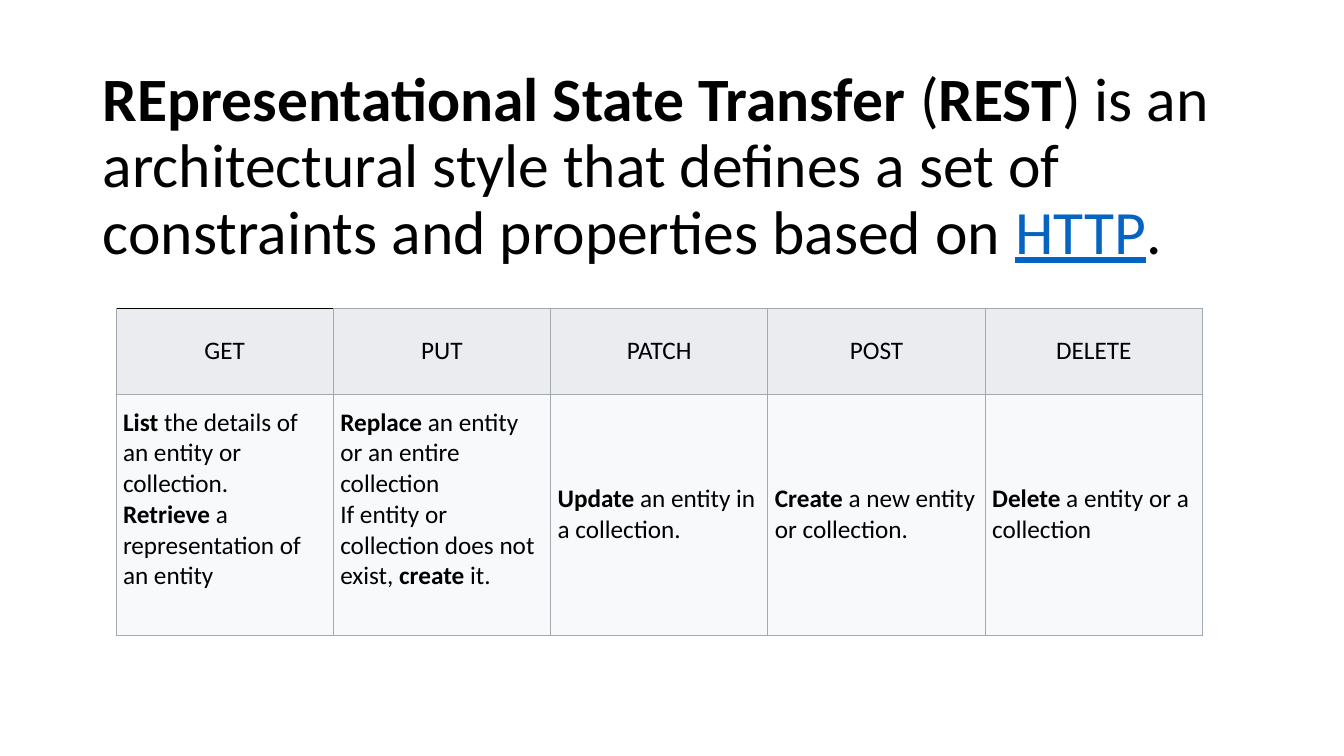
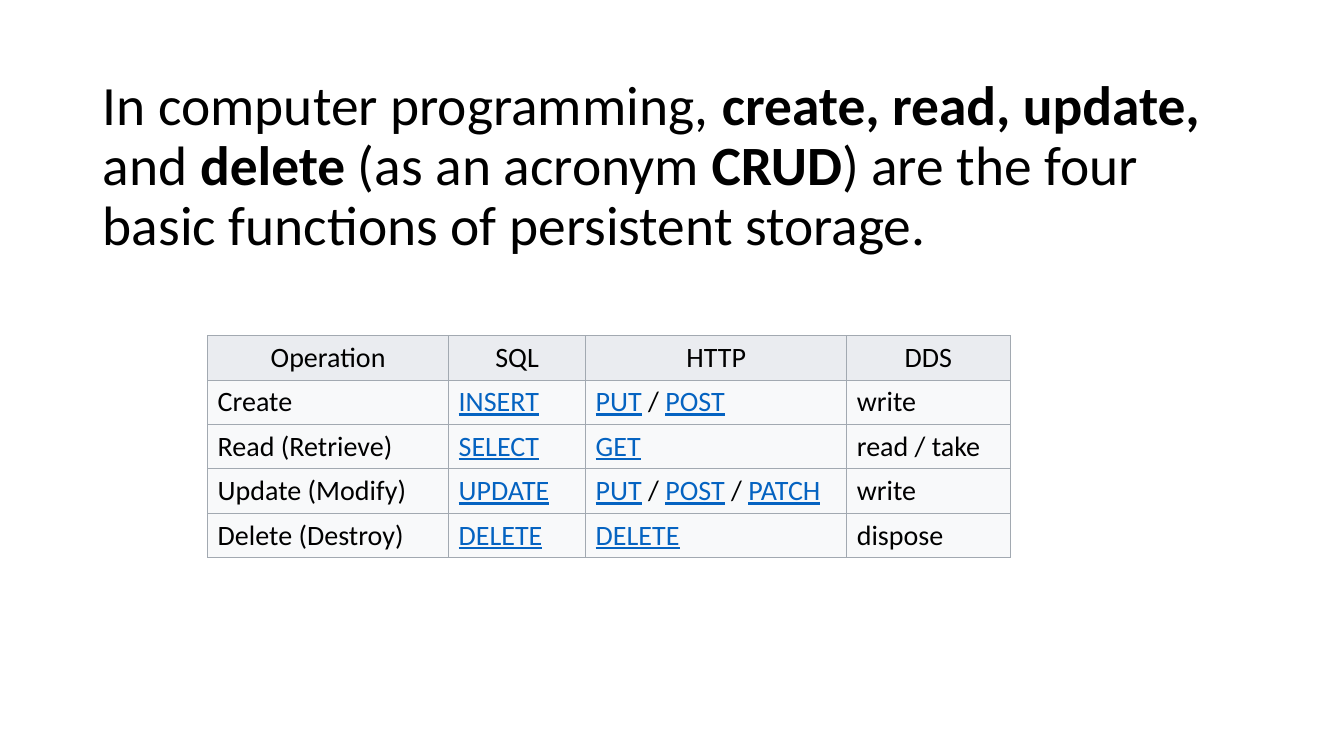
"""Build two slides that introduce REST verbs and CRUD operations."""
from lxml.etree import SubElement
from pptx import Presentation
from pptx.dml.color import RGBColor
from pptx.enum.text import MSO_ANCHOR as Anchor, MSO_AUTO_SIZE as AutoSize, PP_ALIGN as Align
from pptx.oxml.ns import qn
from pptx.util import Inches, Pt

WIDTH, HEIGHT = 13.33, 7.5
FONT = "Calibri"
BLACK = RGBColor(0x00, 0x00, 0x00)
LINK = RGBColor(0x05, 0x63, 0xC1)
BORDER = RGBColor(0xA2, 0xA9, 0xB1)
HEADER = RGBColor(0xEA, 0xEC, 0xF0)
BODY = RGBColor(0xF8, 0xF9, 0xFA)
NBSP = chr(160)

VERBS = [
    ["GET", "PUT", "PATCH", "POST", "DELETE"],
    [
        "*List*~the details of an entity or collection. *Retrieve*~a representation of an entity",
        "*Replace*~an entity or an entire collection\n"
        "If entity or collection does not exist, *create*~it.",
        "*Update *an entity in a collection.",
        "*Create*~a new entity or collection.",
        "*Delete*~a entity or a collection",
    ],
]
OPERATIONS = [
    ["Operation", "SQL", "HTTP", "DDS"],
    ["Create", "_INSERT_", "_PUT_~/~_POST_", "write"],
    ["Read (Retrieve)", "_SELECT_", "_GET_", "read / take"],
    ["Update (Modify)", "_UPDATE_", "_PUT_~/~_POST_~/~_PATCH_", "write"],
    ["Delete (Destroy)", "_DELETE_", "_DELETE_", "dispose"],
]


def across(percent):
    """Return a percentage of the slide's width."""
    return Inches(WIDTH * percent / 100)


def down(percent):
    """Return a percentage of the slide's height."""
    return Inches(HEIGHT * percent / 100)


def add_run(p, text, size, bold, link):
    """Add one run in the shared font."""
    r = p.add_run()
    r.text = text
    r.font.name, r.font.size, r.font.bold = FONT, Pt(size), bold
    r.font.underline = link
    r.font.color.rgb = LINK if link else BLACK


def write(tf, text, size, align=Align.LEFT, spacing=1.0):
    """Fill a frame from text with *bold*, _link_ and ~ for a fixed space."""
    for n, line in enumerate(text.replace("~", NBSP).split("\n")):
        p = tf.add_paragraph() if n else tf.paragraphs[0]
        p.alignment, p.line_spacing = align, spacing
        for i, part in enumerate(line.split("*")):
            for j, piece in enumerate(part.split("_")):
                if piece:
                    add_run(p, piece, size, i % 2 == 1, j % 2 == 1)


def add_titled_slide(prs, title, size):
    """Add a title-only slide with a left-aligned sentence as title."""
    s = prs.slides.add_slide(prs.slide_layouts[5])
    sp = s.shapes.title
    sp.left, sp.top = across(6.9), down(5.33)
    sp.width, sp.height = across(83.95), down(33.73)
    tf = sp.text_frame
    tf.word_wrap, tf.auto_size = True, AutoSize.NONE
    tf.vertical_anchor = Anchor.MIDDLE
    write(tf, title, size, spacing=0.9)
    return s


def set_borders(cell, top=BORDER):
    """Draw thin lines on the four sides of a cell."""
    tc_pr = cell._tc.get_or_add_tcPr()
    sides = {"a:lnL": BORDER, "a:lnR": BORDER, "a:lnT": top, "a:lnB": BORDER}
    for i, (tag, color) in enumerate(sides.items()):
        ln = SubElement(tc_pr, qn(tag), w=str(Pt(0.75)))
        fill = SubElement(ln, qn("a:solidFill"))
        SubElement(fill, qn("a:srgbClr"), val=str(color))
        tc_pr.insert(i, ln)


def add_grid(s, data, left, top, cols, rows, size, inset_x, inset_y):
    """Add a bordered table with a grey header row and return it."""
    table = s.shapes.add_table(len(rows), len(cols), across(left), down(top),
                               across(sum(cols)), down(sum(rows))).table
    table.first_row = table.horz_banding = False
    for column, share in zip(table.columns, cols):
        column.width = across(share)
    for i, (row, share) in enumerate(zip(table.rows, rows)):
        row.height = down(share)
        for cell, text in zip(row.cells, data[i]):
            cell.fill.solid()
            cell.fill.fore_color.rgb = BODY if i else HEADER
            cell.vertical_anchor = Anchor.MIDDLE
            cell.margin_left = cell.margin_right = Inches(inset_x)
            cell.margin_top = cell.margin_bottom = Inches(inset_y)
            write(cell.text_frame, text, size, Align.LEFT if i else Align.CENTER)
            set_borders(cell, BORDER)
    return table


def add_rest_slide(prs):
    """Add the slide on REST and its five verbs."""
    s = add_titled_slide(
        prs, "*REpresentational State Transfer*~(*REST*) is an architectural style that "
        "defines a set of constraints and properties based on~_HTTP_.", 44)
    table = add_grid(s, VERBS, 8.63, 40.8, [16.17] * 5, [11.33, 31.87], 18, 0.07, 0.03)
    for column in range(2):
        table.cell(1, column).margin_bottom = Inches(0.33)
    corner = table.cell(0, 0)
    for ln in corner._tc.tcPr.findall(qn("a:lnT")):
        ln.find(".//" + qn("a:srgbClr")).set("val", str(BLACK))


def add_crud_slide(prs):
    """Add the slide on CRUD and its counterparts."""
    s = add_titled_slide(
        prs, "In computer programming, *create, read, update, *and* delete* (as an acronym "
        "*CRUD*) are the four basic functions of persistent storage.", 39.6)
    add_grid(s, OPERATIONS, 15.45, 44.4, [17.93, 10.2, 19.43, 12.15], [5.87] * 5,
             20, 0.1, 0.05)


def main():
    """Build and save the presentation."""
    prs = Presentation()
    prs.slide_width, prs.slide_height = Inches(WIDTH), Inches(HEIGHT)
    add_rest_slide(prs)
    add_crud_slide(prs)
    prs.save("out.pptx")


if __name__ == "__main__":
    main()
